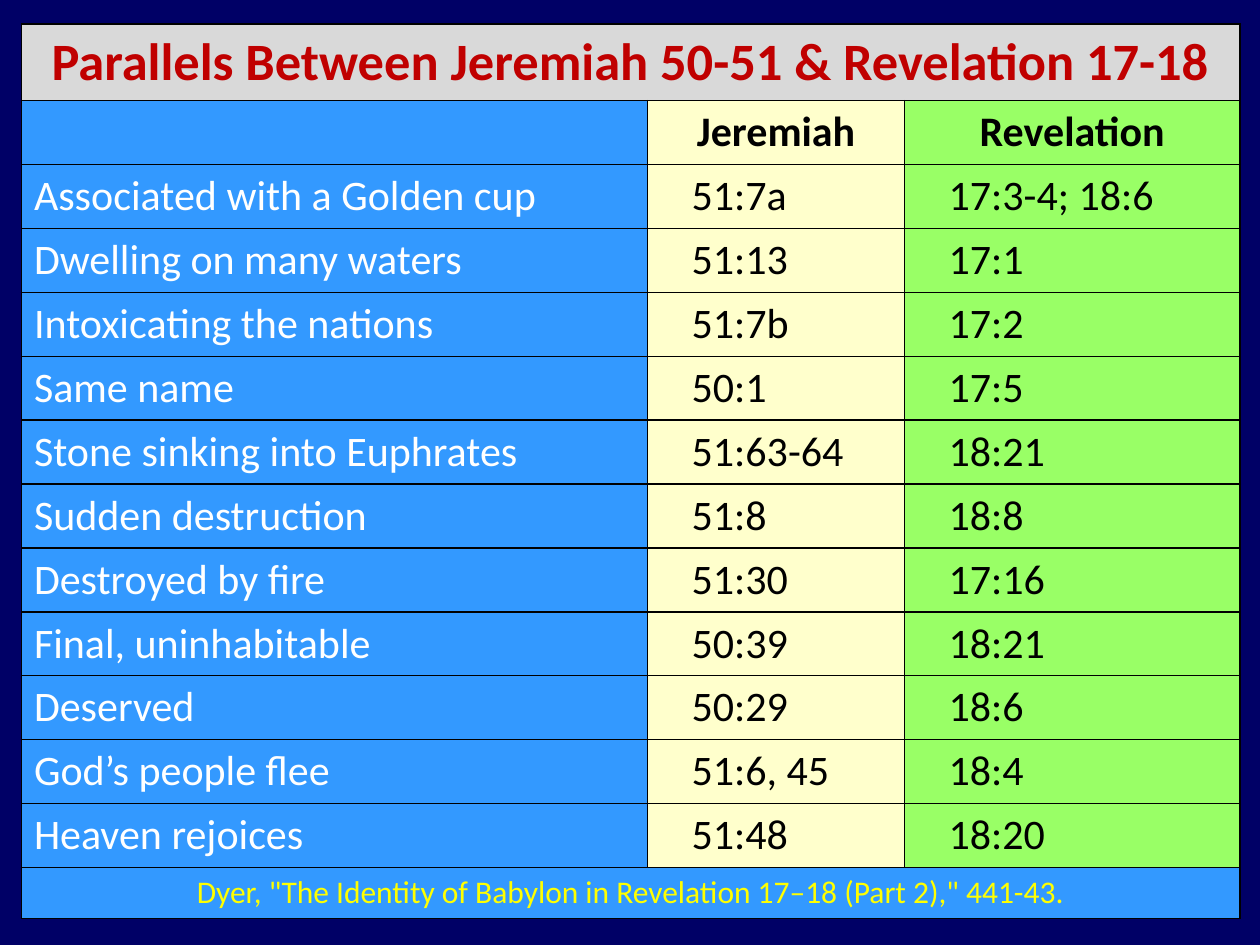
from lxml import etree
from pptx import Presentation
from pptx.dml.color import RGBColor
from pptx.enum.text import PP_ALIGN
from pptx.oxml.ns import qn
from pptx.util import Inches, Pt

CENTER, LEFT = PP_ALIGN.CENTER, PP_ALIGN.LEFT
FONT = "Calibri"
COLORS = {
    "navy": "000066", "gray": "D9D9D9", "blue": "3399FF", "cream": "FFFFCC",
    "green": "99FF66", "red": "C00000", "yellow": "FFFF00",
    "white": "FFFFFF", "black": "000000",
}

TITLE = "Parallels Between Jeremiah 50-51 & Revelation 17-18"
HEADINGS = ("", "Jeremiah", "Revelation")
PARALLELS = [
    ("Associated with a Golden cup", "51:7a", "17:3-4; 18:6"),
    ("Dwelling on many waters", "51:13", "17:1"),
    ("Intoxicating the nations", "51:7b", "17:2"),
    ("Same name", "50:1", "17:5"),
    ("Stone sinking into Euphrates", "51:63-64", "18:21"),
    ("Sudden destruction", "51:8", "18:8"),
    ("Destroyed by fire", "51:30", "17:16"),
    ("Final, uninhabitable", "50:39", "18:21"),
    ("Deserved", "50:29", "18:6"),
    ("God’s people flee", "51:6, 45", "18:4"),
    ("Heaven rejoices", "51:48", "18:20"),
]
SOURCE = 'Dyer, "The Identity of Babylon in Revelation 17–18 (Part 2)," 441-43.'

# Width, fill, text colour and left indent of each column
COLUMNS = [
    (4.97, "blue", "white", 0),
    (2.04, "cream", "black", 0.25),
    (2.66, "green", "black", 0.25),
]
TITLE_HEIGHT, ROW_HEIGHT, SOURCE_HEIGHT = 0.6, 0.5, 0.4


def rgb(name):
    return RGBColor.from_string(COLORS[name])


def add_borders(cell):
    """Draw 1 pt black lines on all sides; they must precede the fill in tcPr."""
    properties = cell._tc.get_or_add_tcPr()
    for position, side in enumerate(("a:lnL", "a:lnR", "a:lnT", "a:lnB")):
        line = etree.Element(qn(side), w=str(Pt(1)))
        fill = etree.SubElement(line, qn("a:solidFill"))
        etree.SubElement(fill, qn("a:srgbClr"), val=COLORS["black"])
        properties.insert(position, line)


def write_cell(cell, text, fill, color, size=24, bold=False, align=CENTER, indent=0):
    cell.fill.solid()
    cell.fill.fore_color.rgb = rgb(fill)
    add_borders(cell)
    paragraph = cell.text_frame.paragraphs[0]
    paragraph.text = text
    paragraph.alignment = align
    if indent:
        paragraph._p.get_or_add_pPr().set("marL", str(Inches(indent)))
    for run in paragraph.runs:
        run.font.name = FONT
        run.font.size = Pt(size)
        run.font.bold = bold
        run.font.color.rgb = rgb(color)


def write_banner(table, row, text, fill, color, size, bold):
    """Fill one row that spans every column."""
    cells = [table.cell(row, column) for column in range(len(COLUMNS))]
    cells[0].merge(cells[-1])
    write_cell(cells[0], text, fill, color, size, bold)
    for cell in cells[1:]:
        add_borders(cell)


def main():
    presentation = Presentation()
    presentation.slide_width, presentation.slide_height = Inches(10), Inches(7.5)
    slide = presentation.slides.add_slide(presentation.slide_layouts[6])
    slide.background.fill.solid()
    slide.background.fill.fore_color.rgb = rgb("navy")

    heights = [TITLE_HEIGHT] + [ROW_HEIGHT] * (len(PARALLELS) + 1) + [SOURCE_HEIGHT]
    width = sum(column[0] for column in COLUMNS)
    table = slide.shapes.add_table(
        len(heights), len(COLUMNS),
        Inches(0.17), Inches(0.19), Inches(width), Inches(sum(heights)),
    ).table
    for row, height in zip(table.rows, heights):
        row.height = Inches(height)

    write_banner(table, 0, TITLE, "gray", "red", 30, True)
    for index, (column_width, fill, color, indent) in enumerate(COLUMNS):
        table.columns[index].width = Inches(column_width)
        write_cell(table.cell(1, index), HEADINGS[index], fill, color, bold=True)
        for row, parallel in enumerate(PARALLELS, start=2):
            write_cell(table.cell(row, index), parallel[index], fill, color,
                       align=LEFT, indent=indent)
    write_banner(table, len(heights) - 1, SOURCE, "blue", "yellow", 18, False)

    presentation.save("out.pptx")


if __name__ == "__main__":
    main()
